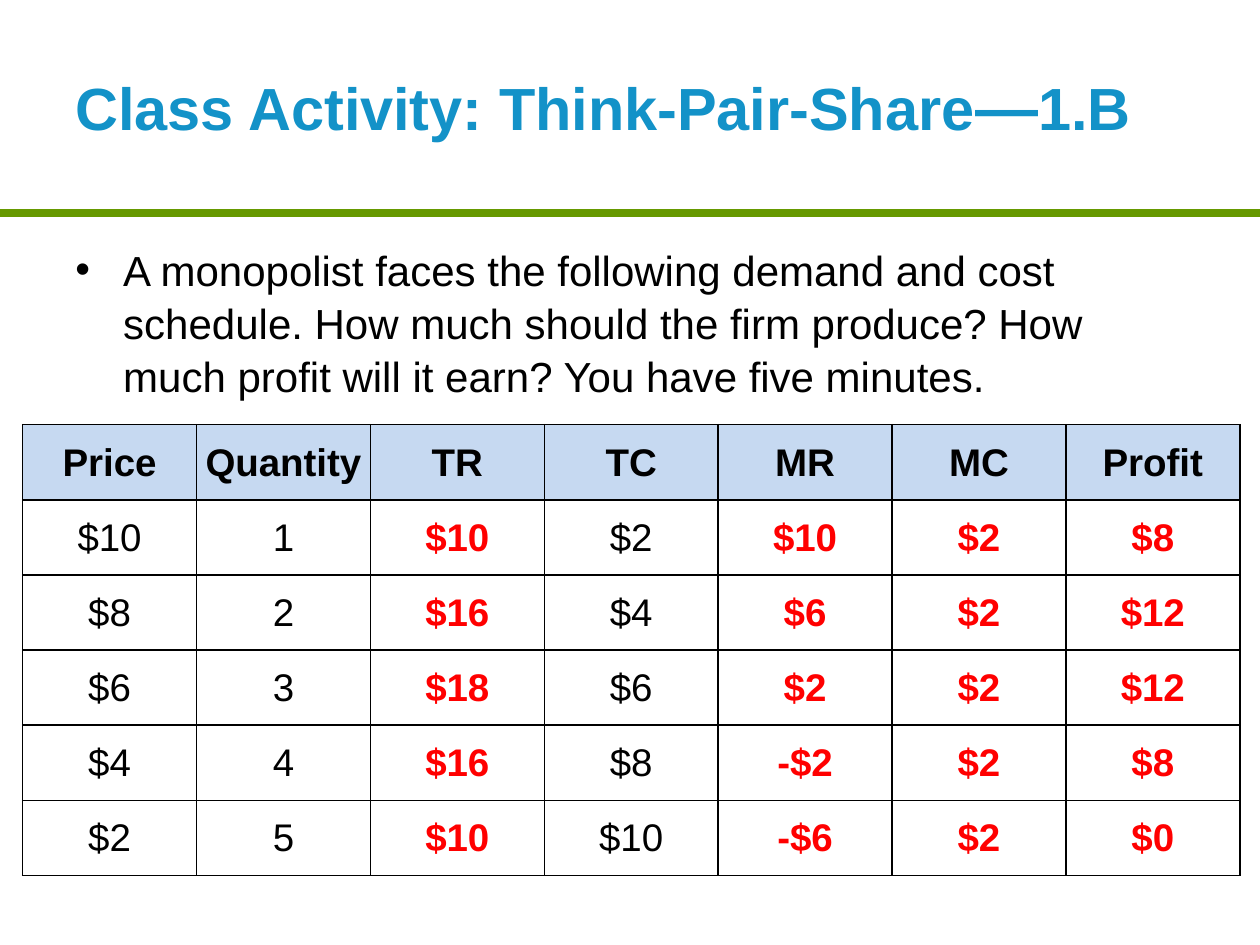
import pptx
import pptx.dml.color
import pptx.enum.shapes
import pptx.enum.text
import pptx.oxml
import pptx.oxml.ns
import pptx.util
from dataclasses import dataclass

Inches = pptx.util.Inches
Pt = pptx.util.Pt
RGBColor = pptx.dml.color.RGBColor
ALIGN = pptx.enum.text.PP_ALIGN
ANCHOR = pptx.enum.text.MSO_ANCHOR


@dataclass(frozen=True)
class Theme:
    font: str = "Arial"
    title: str = "1392C8"
    rule: str = "669900"
    text: str = "000000"
    answer: str = "FF0000"
    header: str = "C6D9F1"
    title_size: int = 34
    dash_size: int = 36
    body_size: int = 24
    table_size: int = 22


theme = Theme()


def add_span(para, text, size, color, bold=False):
    span = para.add_run()
    span.text = text
    formats = {"name": theme.font, "size": Pt(size), "bold": bold}
    for name, value in formats.items():
        setattr(span.font, name, value)
    span.font.color.rgb = RGBColor.from_string(color)


def add_xml(parent, markup):
    namespace = pptx.oxml.ns.nsdecls("a")
    parent.append(pptx.oxml.parse_xml(markup.replace("NS", namespace, 1)))


deck = pptx.Presentation()
deck.slide_width = Inches(10)
deck.slide_height = Inches(7.5)
page = deck.slides.add_slide(deck.slide_layouts[5])

# Rule under the title
rule = page.shapes.add_connector(
    pptx.enum.shapes.MSO_CONNECTOR.STRAIGHT,
    Inches(0), Inches(1.69), Inches(10), Inches(1.69))
rule.line.color.rgb = RGBColor.from_string(theme.rule)
rule.line.width = Pt(4.5)
add_xml(rule._element.spPr, "<a:effectLst NS/>")

# Title
title = page.shapes.title
place = {"left": 0.5, "top": 0, "width": 9, "height": 1.67}
for name, value in place.items():
    setattr(title, name, Inches(value))
title.text_frame.vertical_anchor = ANCHOR.MIDDLE
para = title.text_frame.paragraphs[0]
para.alignment = ALIGN.LEFT
for text, size in (("Class Activity: Think-Pair-Share", theme.title_size),
                   ("—", theme.dash_size),
                   ("1.B", theme.title_size)):
    add_span(para, text, size, theme.title, bold=True)

# Question
box = page.shapes.add_textbox(Inches(0.5), Inches(1.87), Inches(9), Inches(1.27))
box.text_frame.word_wrap = True
para = box.text_frame.paragraphs[0]
para.space_before = Pt(4.8)
para.line_spacing = 1.05
add_span(para, "A monopolist faces the following demand and cost schedule. "
         "How much should the firm produce? How much profit will it earn? "
         "You have five minutes.", theme.body_size, theme.text)
bullet = para._p.get_or_add_pPr()
bullet.set("marL", str(Inches(0.38)))
bullet.set("indent", str(Inches(-0.38)))
add_xml(bullet, f'<a:buFont NS typeface="{theme.font}"/>')
add_xml(bullet, '<a:buChar NS char="•"/>')

# Demand and cost schedule
schedule = [
    ["Price", "Quantity", "TR", "TC", "MR", "MC", "Profit"],
    ["$10", "1", "$10", "$2", "$10", "$2", "$8"],
    ["$8", "2", "$16", "$4", "$6", "$2", "$12"],
    ["$6", "3", "$18", "$6", "$2", "$2", "$12"],
    ["$4", "4", "$16", "$8", "-$2", "$2", "$8"],
    ["$2", "5", "$10", "$10", "-$6", "$2", "$0"],
]
answers = {"TR", "MR", "MC", "Profit"}
headings = schedule[0]
table = page.shapes.add_table(
    len(schedule), len(headings),
    Inches(0.18), Inches(3.37), Inches(9.66), Inches(3.58)).table
table.first_row = False
table.horz_banding = False

cell_format = {
    "vertical_anchor": ANCHOR.MIDDLE,
    "margin_left": Inches(0.01),
    "margin_right": Inches(0.01),
    "margin_top": Inches(0.01),
    "margin_bottom": Inches(0),
}
for row, values in enumerate(schedule):
    for column, value in enumerate(values):
        cell = table.cell(row, column)
        for name, setting in cell_format.items():
            setattr(cell, name, setting)
        for side in ("lnL", "lnR", "lnT", "lnB"):
            add_xml(cell._tc.get_or_add_tcPr(),
                    f'<a:{side} NS w="{Pt(1)}"><a:solidFill>'
                    f'<a:srgbClr val="{theme.text}"/></a:solidFill></a:{side}>')
        is_header = row == 0
        is_answer = not is_header and headings[column] in answers
        if is_header:
            cell.fill.solid()
            cell.fill.fore_color.rgb = RGBColor.from_string(theme.header)
        else:
            cell.fill.background()
        para = cell.text_frame.paragraphs[0]
        para.alignment = ALIGN.CENTER
        add_span(para, value, theme.table_size,
                 theme.answer if is_answer else theme.text,
                 bold=is_header or is_answer)

deck.save("out.pptx")
